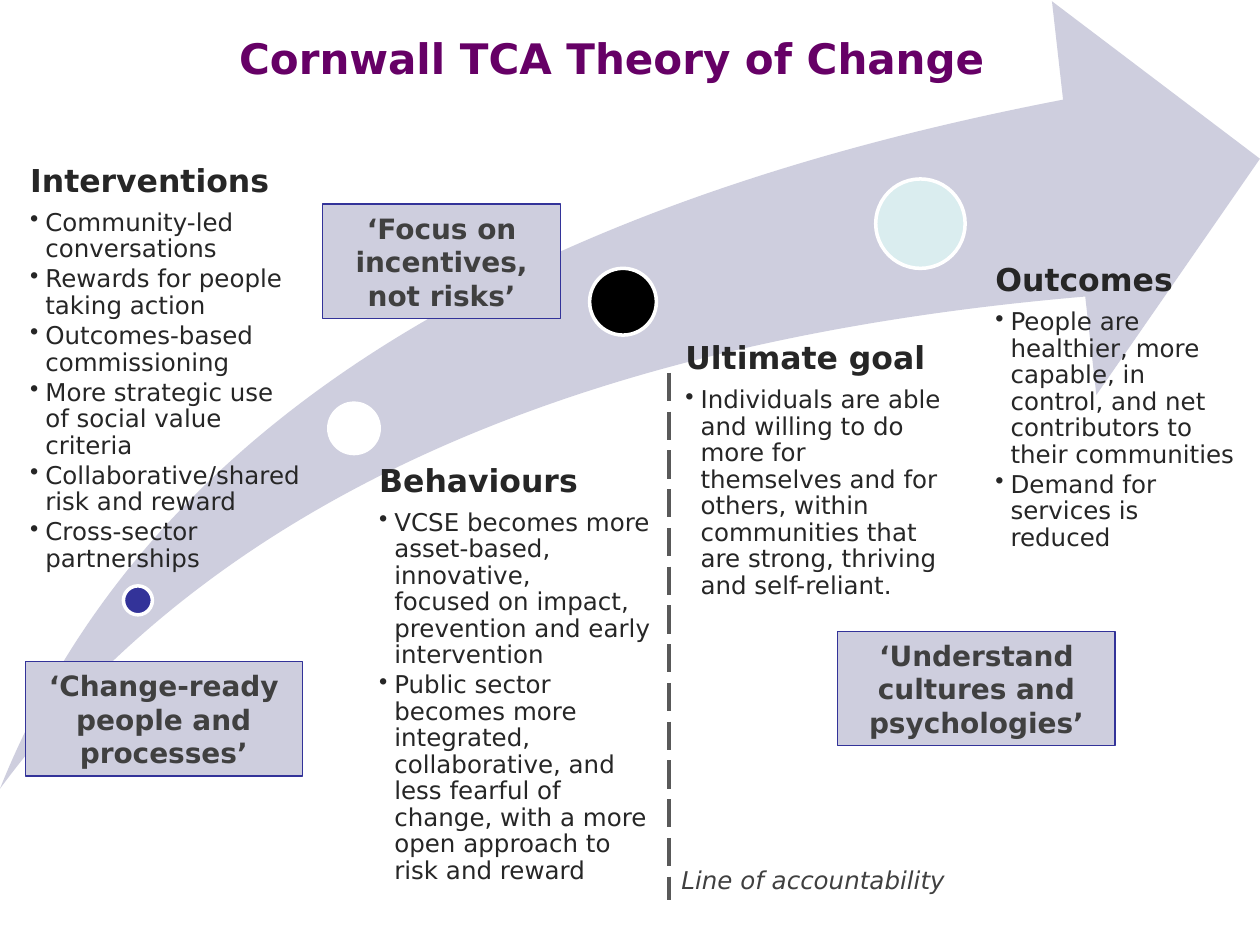
import pptx
import pptx.util
import pptx.dml.color
import pptx.enum.dml
import pptx.enum.shapes
import pptx.enum.text
import pptx.oxml.ns
from dataclasses import dataclass
from lxml import etree

Inches = pptx.util.Inches
Pt = pptx.util.Pt
SHAPE = pptx.enum.shapes.MSO_SHAPE
ALIGN = pptx.enum.text.PP_ALIGN
qn = pptx.oxml.ns.qn


@dataclass(frozen=True)
class Theme:
    font: str = "DejaVu Sans"
    title: str = "660066"
    body: str = "262626"
    muted: str = "404040"
    rule: str = "595959"
    lilac: str = "CECEDE"
    indigo: str = "333399"
    white: str = "FFFFFF"
    black: str = "000000"
    aqua: str = "DAEDEF"
    title_size: int = 24
    heading_size: int = 18
    quote_size: int = 16
    body_size: int = 14


def rgb(value):
    return pptx.dml.color.RGBColor.from_string(value)


class SlideBuilder:
    def __init__(self, slide, theme):
        self.slide = slide
        self.theme = theme

    def style_text(self, paragraph, text, size, color, bold=False, italic=False):
        paragraph.text = text
        for run in paragraph.runs:
            run.font.name = self.theme.font
            run.font.size = Pt(size)
            run.font.bold = bold
            run.font.italic = italic
            run.font.color.rgb = rgb(color)
        # Line breaks carry their own size
        for line_break in paragraph._p.findall(qn("a:br")):
            etree.SubElement(line_break, qn("a:rPr")).set("sz", str(size * 100))

    def shape(self, kind, left, top, width, height, fill, line=None, weight=2):
        shape = self.slide.shapes.add_shape(
            kind, Inches(left), Inches(top), Inches(width), Inches(height))
        shape.shadow.inherit = False
        shape.fill.solid()
        shape.fill.fore_color.rgb = rgb(fill)
        if line:
            shape.line.color.rgb = rgb(line)
            shape.line.width = Pt(weight)
        else:
            shape.line.fill.background()
        return shape

    def swoosh(self, left, top, width, height):
        arrow = self.shape(SHAPE.SWOOSH_ARROW, left, top, width, height, self.theme.lilac)
        arrow.adjustments[0] = 0.25
        arrow.adjustments[1] = 0.25

    def milestone(self, left, top, diameter, fill):
        self.shape(SHAPE.OVAL, left, top, diameter, diameter, fill, self.theme.white)

    def text_box(self, left, top, width, height):
        box = self.slide.shapes.add_textbox(
            Inches(left), Inches(top), Inches(width), Inches(height))
        box.text_frame.word_wrap = True
        return box.text_frame

    def label(self, left, top, width, height, text, size, color, **style):
        frame = self.text_box(left, top, width, height)
        self.style_text(frame.paragraphs[0], text, size, color, **style)

    def stage(self, left, top, width, height, inset, heading, points):
        theme = self.theme
        frame = self.text_box(left, top, width, height)
        frame.margin_left = Inches(inset)
        frame.margin_top = frame.margin_right = frame.margin_bottom = 0
        title = frame.paragraphs[0]
        title.line_spacing = 0.9
        title.space_after = Pt(0.35 * theme.heading_size)
        self.style_text(title, heading, theme.heading_size, theme.body, bold=True)
        for point in points:
            item = frame.add_paragraph()
            item.level = 1
            self.bullet(item)
            item.line_spacing = 0.9
            item.space_after = Pt(0.15 * theme.body_size)
            self.style_text(item, point, theme.body_size, theme.body)

    def bullet(self, paragraph):
        properties = paragraph._p.get_or_add_pPr()
        properties.set("marL", str(Inches(0.12)))
        properties.set("indent", str(-Inches(0.12)))
        etree.SubElement(properties, qn("a:buChar")).set("char", "•")

    def quote(self, left, top, width, height, text):
        theme = self.theme
        box = self.shape(SHAPE.RECTANGLE, left, top, width, height,
                         theme.lilac, theme.indigo, 0.75)
        box.text_frame.word_wrap = True
        paragraph = box.text_frame.paragraphs[0]
        paragraph.alignment = ALIGN.CENTER
        self.style_text(paragraph, text, theme.quote_size, theme.muted, bold=True)

    def dashed_line(self, x, top, bottom):
        line = self.slide.shapes.add_connector(
            pptx.enum.shapes.MSO_CONNECTOR.STRAIGHT,
            Inches(x), Inches(top), Inches(x), Inches(bottom))
        line.line.color.rgb = rgb(self.theme.rule)
        line.line.width = Pt(2)
        line.line.dash_style = pptx.enum.dml.MSO_LINE.LONG_DASH
        etree.SubElement(line._element.spPr, qn("a:effectLst"))


def main():
    presentation = pptx.Presentation()
    presentation.slide_width = Inches(10)
    presentation.slide_height = Inches(7.5)
    slide = presentation.slides.add_slide(presentation.slide_layouts[6])
    theme = Theme()
    builder = SlideBuilder(slide, theme)

    # Rising arrow
    builder.swoosh(0, 0.01, 10, 6.25)

    # Milestones along the arrow, each with its stage text
    stages = [
        ((0.98, 4.65, 0.23, theme.indigo), (0.12, 1.31, 2.3, 3.96, 0.12), "Interventions", [
            "Community-led conversations",
            "Rewards for people taking action",
            "Outcomes-based commissioning",
            "More strategic use of social value criteria",
            "Collaborative/shared risk and reward",
            "Cross-sector partnerships"]),
        ((2.61, 3.2, 0.4, theme.white), (2.8, 3.69, 2.44, 3.44, 0.21), "Behaviours", [
            "VCSE becomes more\vasset-based, innovative, \v"
            "focused on impact, prevention and early intervention",
            "Public sector becomes more integrated, collaborative, and less fearful "
            "of change, with a more open approach to risk and reward"]),
        ((4.68, 2.13, 0.53, theme.black), (5.16, 2.72, 2.41, 3.86, 0.28), "Ultimate goal", [
            "Individuals are able and willing to do more for themselves and for others, "
            "within communities that are strong, thriving and self-reliant."]),
        ((6.95, 1.42, 0.71, theme.aqua), (7.52, 2.1, 2.28, 4.48, 0.38), "Outcomes", [
            "People are healthier, more capable, in control, and net contributors "
            "to their communities",
            "Demand for services is reduced"]),
    ]
    for milestone, area, heading, points in stages:
        builder.milestone(*milestone)
        builder.stage(*area, heading, points)

    # Title
    builder.label(1.8, 0.21, 6.77, 0.5, "Cornwall TCA Theory of Change",
                  theme.title_size, theme.title, bold=True)

    # Guiding principles
    builder.quote(0.2, 5.25, 2.2, 0.91, "‘Change-ready people and processes’")
    builder.quote(6.65, 5.01, 2.2, 0.91, "‘Understand cultures and psychologies’")
    builder.quote(2.56, 1.62, 1.89, 0.91, "‘Focus on incentives, not risks’")

    # Line of accountability
    builder.dashed_line(5.31, 2.96, 7.14)
    builder.label(5.31, 6.82, 3.94, 0.34, "Line of accountability",
                  theme.body_size, theme.muted, italic=True)

    presentation.save("out.pptx")


if __name__ == "__main__":
    main()
